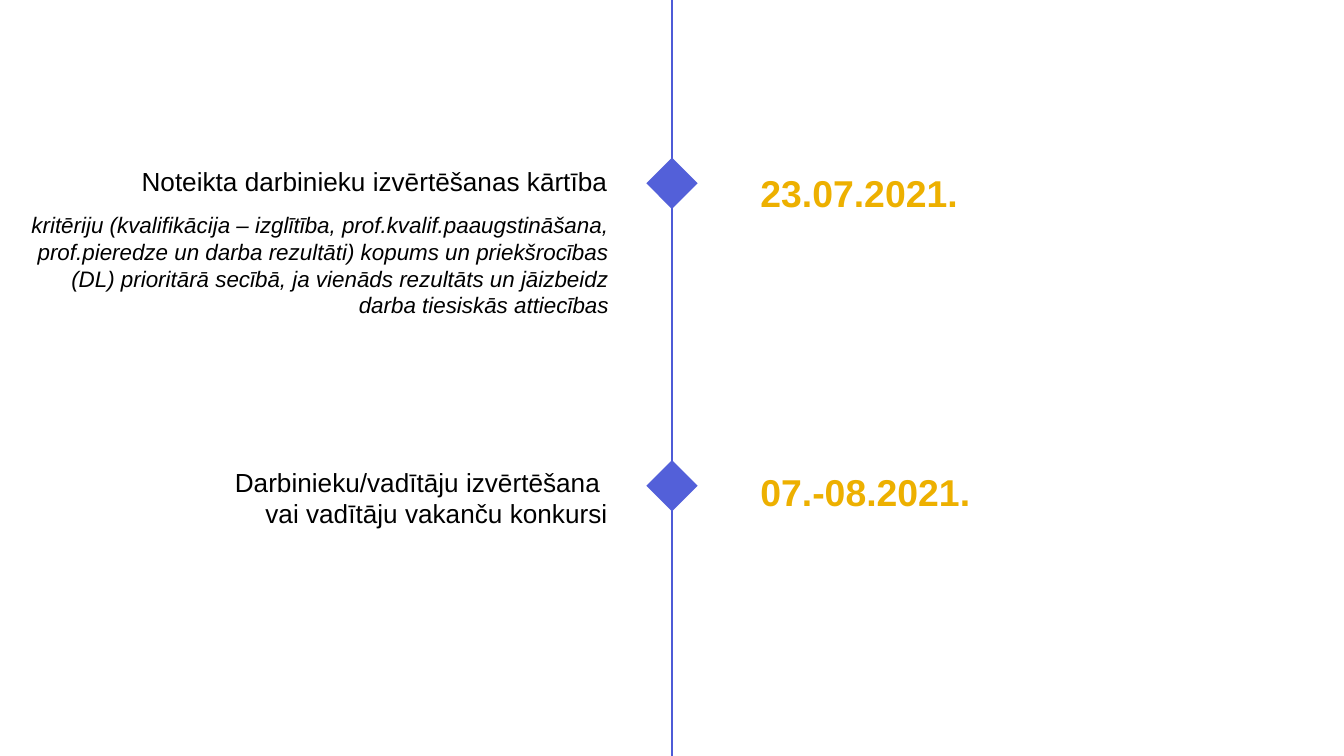
from dataclasses import dataclass

from lxml import etree
from pptx import Presentation
from pptx.dml.color import RGBColor
from pptx.enum.shapes import MSO_CONNECTOR, MSO_SHAPE
from pptx.enum.text import MSO_AUTO_SIZE, PP_ALIGN
from pptx.oxml.ns import qn
from pptx.util import Inches, Pt


@dataclass(frozen=True)
class Theme:
    font: str = "Arial"
    text: RGBColor = RGBColor.from_string("000000")
    date: RGBColor = RGBColor.from_string("EDB000")
    axis: RGBColor = RGBColor.from_string("4E5BD7")
    marker: RGBColor = RGBColor.from_string("5360D9")
    heading_size: int = 14
    date_size: int = 20
    detail_size: int = 12


THEME = Theme()
AXIS_X = 5
MARKER_SIZE = 0.27
TEXT_RIGHT = 4.62
DATE_LEFT = 5.56

# Marker top, heading (top, width, height, text), date (top, text)
EVENTS = [
    (1.23, (1.18, 4.13, 0.34, "Noteikta darbinieku izvērtēšanas kārtība"),
     (1.22, "23.07.2021.")),
    (3.48, (3.42, 4.39, 0.57, "Darbinieku/vadītāju izvērtēšana \nvai vadītāju vakanču konkursi"),
     (3.44, "07.-08.2021.")),
]
DETAIL = (
    "kritēriju (kvalifikācija – izglītība, prof.kvalif.paaugstināšana, "
    "prof.pieredze un darba rezultāti) kopums un priekšrocības (DL) prioritārā "
    "secībā, ja vienāds rezultāts un jāizbeidz darba tiesiskās attiecības"
)


def add_axis(s):
    line = s.shapes.add_connector(
        MSO_CONNECTOR.STRAIGHT, Inches(AXIS_X), Inches(-0.12), Inches(AXIS_X), Inches(5.69))
    line.line.color.rgb = THEME.axis
    line.line.width = Pt(1.5)
    etree.SubElement(line._element.spPr, qn("a:effectLst"))


def add_marker(s, top):
    sp = s.shapes.add_shape(
        MSO_SHAPE.RECTANGLE, Inches(AXIS_X - MARKER_SIZE / 2), Inches(top),
        Inches(MARKER_SIZE), Inches(MARKER_SIZE))
    sp.rotation = 45
    sp.shadow.inherit = False
    sp.fill.solid()
    sp.fill.fore_color.rgb = THEME.marker
    sp.line.fill.background()


def add_text(s, left, top, width, height, text, size, color=THEME.text,
             align=PP_ALIGN.RIGHT, bold=False, italic=False):
    sp = s.shapes.add_textbox(Inches(left), Inches(top), Inches(width), Inches(height))
    tf = sp.text_frame
    tf.word_wrap = True
    tf.auto_size = MSO_AUTO_SIZE.SHAPE_TO_FIT_TEXT
    tf.text = text
    for p in tf.paragraphs:
        p.alignment = align
        for r in p.runs:
            r.font.name = THEME.font
            r.font.size = Pt(size)
            r.font.bold = bold
            r.font.italic = italic
            r.font.color.rgb = color


def add_event(s, marker_top, heading, date):
    add_marker(s, marker_top)
    top, width, height, text = heading
    add_text(s, TEXT_RIGHT - width, top, width, height, text, THEME.heading_size)
    top, text = date
    add_text(s, DATE_LEFT, top, 2.67, 0.44, text, THEME.date_size,
             THEME.date, PP_ALIGN.LEFT, bold=True)


def main():
    prs = Presentation()
    prs.slide_width = Inches(10)
    prs.slide_height = Inches(10 * 9 / 16)
    s = prs.slides.add_slide(prs.slide_layouts[6])

    # Timeline axis and its events
    add_axis(s)
    for event in EVENTS:
        add_event(s, *event)

    # Criteria below the first heading
    add_text(s, 0.12, 1.52, 4.51, 0.91, DETAIL, THEME.detail_size, italic=True)

    prs.save("out.pptx")


if __name__ == "__main__":
    main()
